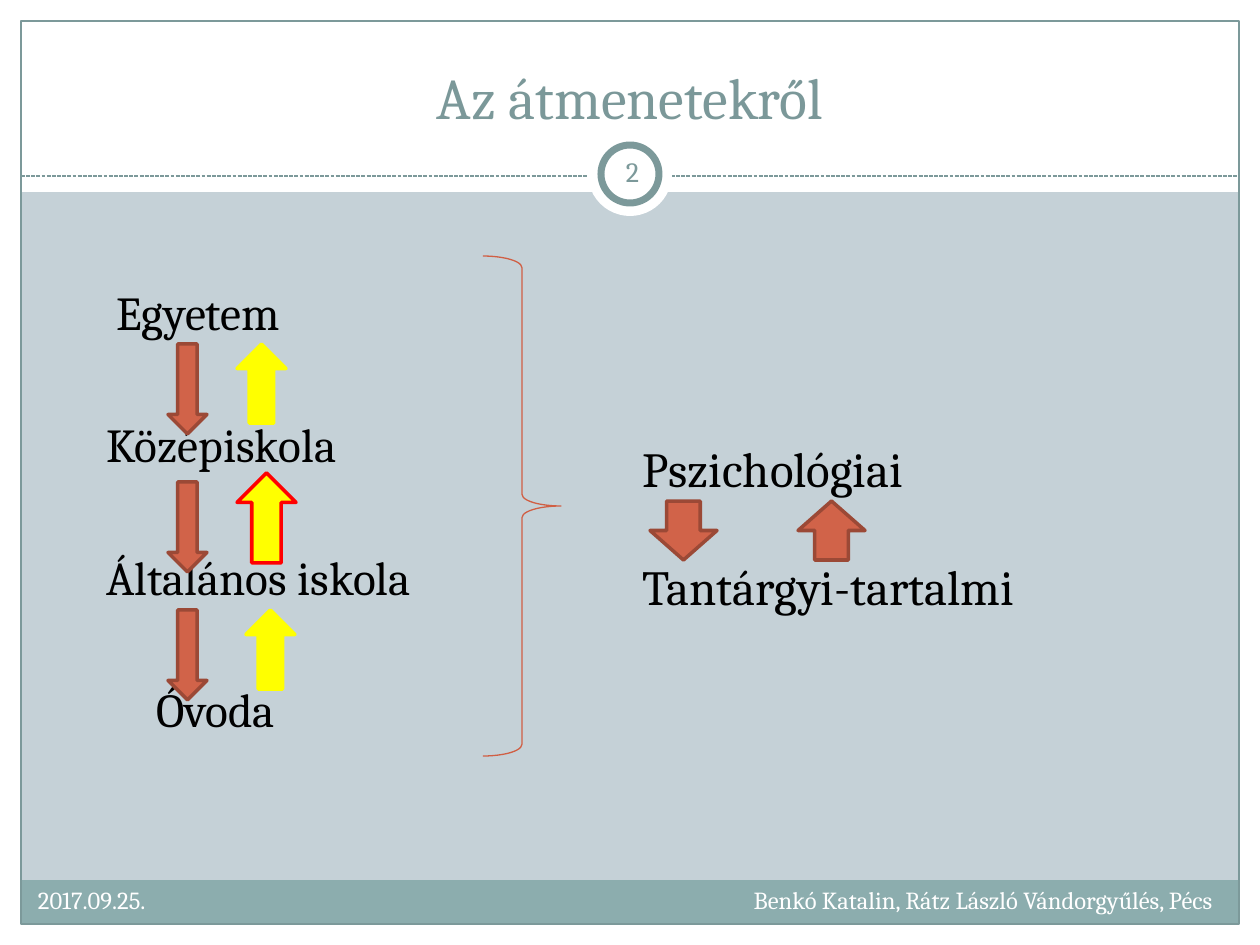
from lxml.etree import SubElement
from pptx import Presentation
from pptx.dml.color import RGBColor
from pptx.enum.dml import MSO_LINE
from pptx.enum.shapes import MSO_CONNECTOR, MSO_SHAPE as Preset
from pptx.enum.text import MSO_ANCHOR as Anchor, MSO_AUTO_SIZE, PP_ALIGN as Align
from pptx.oxml.ns import qn
from pptx.util import Emu, Pt

FONT = "Cambria"
COLORS = {
    "background": "C5D1D7", "white": "FFFFFF", "black": "000000",
    "band": "8CADAE", "frame": "7C999A", "title": "7B9899",
    "rust": "D16349", "rust_edge": "9B4936", "brace": "D05F44",
    "yellow": "FFFF00", "red": "FF0000",
}


def px(length):
    """Turn pixels at 126 to the inch into EMU."""
    return Emu(round(length * 914400 / 126))


def color(name):
    """Look up a named colour."""
    return RGBColor.from_string(COLORS[name])


def add_shape(slide, preset, box, fill=None, line=None, width=0.75):
    """Add a flat preset shape with an optional fill and outline."""
    shape = slide.shapes.add_shape(preset, *map(px, box))
    shape.shadow.inherit = False
    if fill:
        shape.fill.solid()
        shape.fill.fore_color.rgb = color(fill)
    else:
        shape.fill.background()
    if line:
        shape.line.color.rgb = color(line)
        shape.line.width = Pt(width)
    else:
        shape.line.fill.background()
    return shape


def set_text(shape, lines, size, ink, align=Align.LEFT, anchor=Anchor.TOP,
             inset=(0, 0), gap=0, indents=None):
    """Write lines as paragraphs with a shared format."""
    frame = shape.text_frame
    frame.word_wrap = True
    frame.auto_size = MSO_AUTO_SIZE.NONE
    frame.vertical_anchor = anchor
    frame.margin_left = frame.margin_right = px(inset[0])
    frame.margin_top = frame.margin_bottom = px(inset[1])
    frame.text = "\n".join(lines)
    for index, paragraph in enumerate(frame.paragraphs):
        paragraph.alignment = align
        paragraph.space_before = Pt(gap if index else 0)
        paragraph.font.name = FONT
        paragraph.font.size = Pt(size)
        paragraph.font.color.rgb = color(ink)
        if indents:
            paragraph._p.get_or_add_pPr().set("marL", str(px(indents[index])))


def add_text(slide, box, lines, size, ink, **options):
    """Add a text box."""
    set_text(slide.shapes.add_textbox(*map(px, box)), lines, size, ink, **options)


def add_frame(slide, box, margin):
    """Draw the white page margin, header ground and framed edge."""
    left, top, width, height = box
    right, bottom = left + width, top + height
    for area in (
        (left, bottom - margin, width, margin),
        (left, top, width, 192),
        (left, top, margin, height),
        (right - margin, top, margin, height),
    ):
        add_shape(slide, Preset.RECTANGLE, area, "white")
    inner = (left + margin, top + margin, width - 2 * margin, height - 2 * margin)
    add_shape(slide, Preset.RECTANGLE, inner, line="frame")


def add_header(slide, box, title, number):
    """Place the title, dashed rule and number badge."""
    left, top, width, height = box
    rule_y = top + height
    middle = left + width // 2
    rule = slide.shapes.add_connector(
        MSO_CONNECTOR.STRAIGHT, px(left), px(rule_y), px(left + width), px(rule_y))
    rule.line.color.rgb = color("frame")
    rule.line.width = Pt(0.75)
    rule.line.dash_style = MSO_LINE.SQUARE_DOT
    SubElement(rule._element.spPr, qn("a:effectLst"))
    for diameter, line in ((84, None), (58, "frame")):
        badge = (middle - diameter // 2, rule_y - 2 - diameter // 2, diameter, diameter)
        add_shape(slide, Preset.OVAL, badge, "white", line, 4)
    add_text(slide, (middle - 29, rule_y - 35, 63, 60), [number], 16, "frame",
             align=Align.CENTER, anchor=Anchor.MIDDLE, inset=(6, 6))

    heading = slide.shapes.title
    heading.left, heading.top = px(left + 21), px(top + 11)
    heading.width, heading.height = px(width - 42), px(105)
    set_text(heading, [title], 33, "title", align=Align.CENTER,
             anchor=Anchor.BOTTOM, inset=(13, 6))
    slide.shapes._spTree.append(heading._element)


def add_levels(slide, box):
    """List the school levels with arrows down and up between them."""
    left, top, width, height = box
    add_text(slide, box, ["Egyetem", "Középiskola", "Általános iskola", "Óvoda"],
             27, "black", gap=43.3, indents=(10, 0, 0, 50))
    for y in (61, 199, 327):
        add_shape(slide, Preset.DOWN_ARROW, (left + 62, top + y, 39, 90),
                  "rust", "rust_edge", 2)
    for x, y, arrow_width, arrow_height, edge in (
        (131, 61, 49, 79, "yellow"),
        (131, 190, 59, 90, "red"),
        (140, 327, 49, 79, "yellow"),
    ):
        add_shape(slide, Preset.UP_ARROW,
                  (left + x, top + y, arrow_width, arrow_height), "yellow", edge, 2)


def add_aspects(slide, box):
    """Show the two aspects of transition with arrows between them."""
    left, top, width, height = box
    add_text(slide, box, ["Pszichológiai", "Tantárgyi-tartalmi"], 28, "black",
             inset=(13, 6), gap=33.8)
    for preset, x in ((Preset.DOWN_ARROW, 20), (Preset.UP_ARROW, 168)):
        add_shape(slide, preset, (left + x, top + 68, 67, 59), "rust", "rust_edge", 2)


def add_footer(slide, box, date, source):
    """Draw the footer band with the date and the source."""
    left, top, width, height = box
    add_shape(slide, Preset.RECTANGLE, box, "band")
    add_text(slide, (left + 4, top - 1, 420, 50), [date], 14, "white", inset=(13, 6))
    add_text(slide, (left + width - 627, top - 1, 615, 50), [source], 14, "white",
             align=Align.RIGHT, inset=(13, 6))


def main():
    """Build and save the slide."""
    presentation = Presentation()
    presentation.slide_width, presentation.slide_height = px(1260), px(945)
    slide = presentation.slides.add_slide(presentation.slide_layouts[5])
    slide.background.fill.solid()
    slide.background.fill.fore_color.rgb = color("background")
    add_footer(slide, (21, 880, 1217, 43), "2017.09.25.",
               "Benkó Katalin, Rátz László Vándorgyűlés, Pécs")
    add_frame(slide, (0, 0, 1260, 945), 21)
    add_header(slide, (21, 21, 1218, 155), "Az átmenetekről", "2")
    add_levels(slide, (106, 283, 370, 460))
    brace = add_shape(slide, Preset.RIGHT_BRACE, (483, 256, 78, 500), line="brace")
    brace.adjustments[0] = 0.15
    add_aspects(slide, (630, 433, 473, 190))
    presentation.save("out.pptx")


if __name__ == "__main__":
    main()
